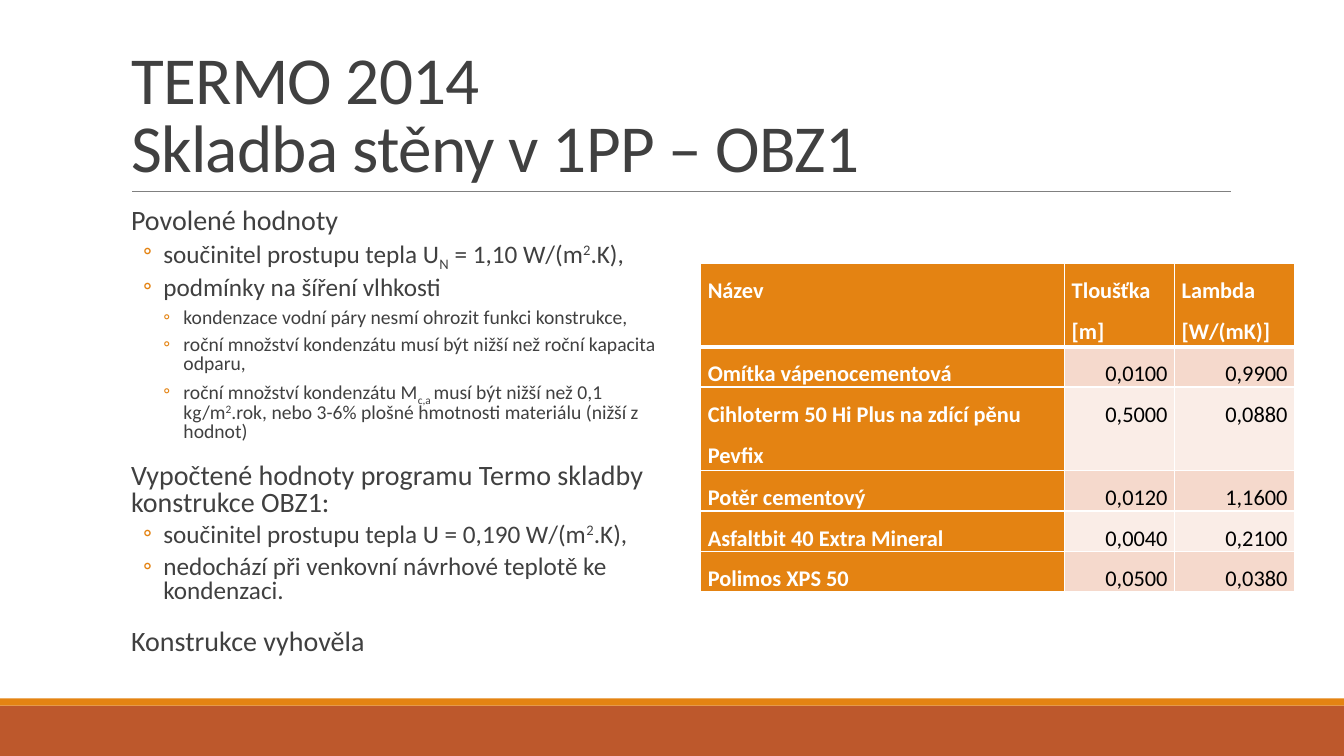
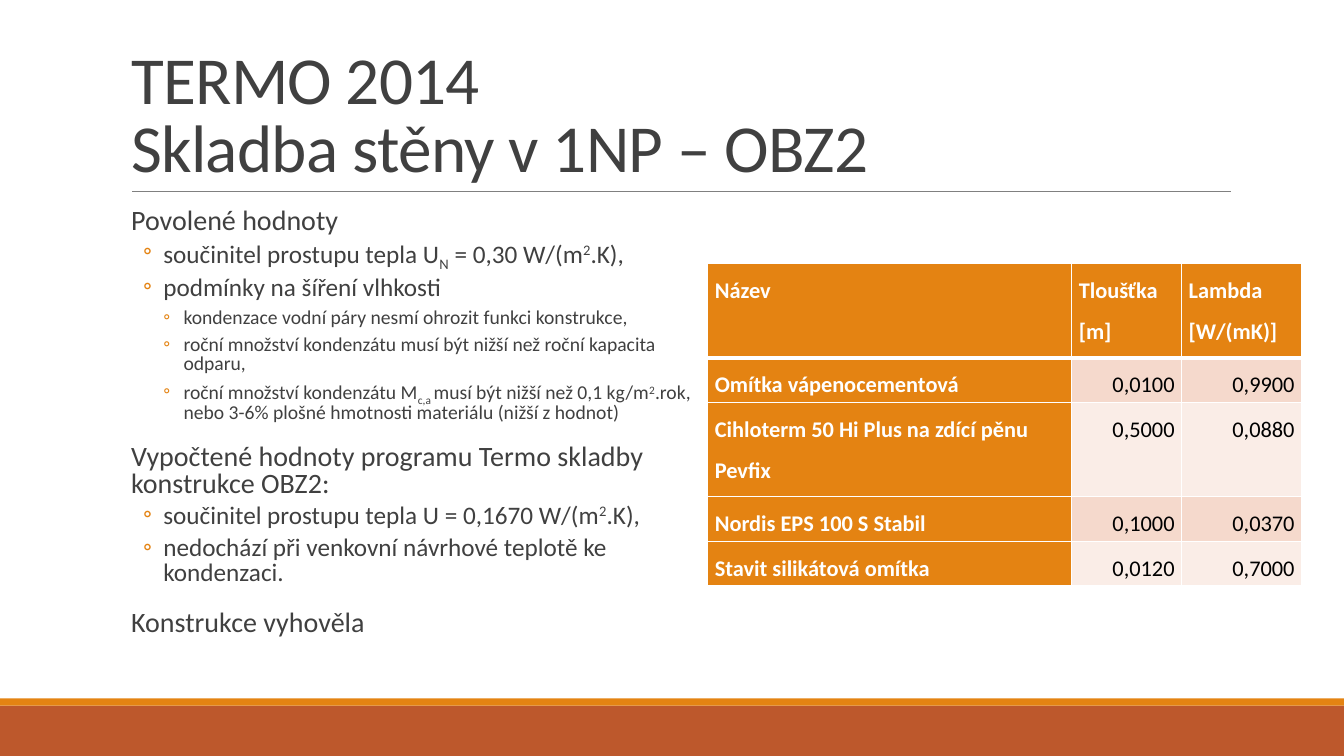
from dataclasses import dataclass

from lxml.etree import SubElement
from pptx import Presentation
from pptx.dml.color import RGBColor
from pptx.enum.shapes import MSO_CONNECTOR as Connector, MSO_SHAPE as Shape
from pptx.enum.text import MSO_ANCHOR as Anchor, PP_ALIGN as Align
from pptx.oxml import parse_xml
from pptx.oxml.ns import nsdecls, qn
from pptx.util import Inches, Pt

FONT = "Calibri"
WHITE, BLACK, TEXT, RULE = "FFFFFF", "000000", "404040", "808080"
ORANGE, RUST = "E48312", "BD582C"
BANDS = ("F5D9CC", "FAEDE7")
GRID_STEP = 0.1
COLUMNS, ROWS = 133.3, 75

LEVELS = {
    "heading": dict(size=20, margin=1, hanging=0, before=12, after=2, spacing=0.8),
    "item": dict(size=18, margin=4.2, hanging=2, before=2, after=4, spacing=0.8),
    "detail": dict(size=14, margin=6.2, hanging=2, before=2, after=4, spacing=0.8),
    "verdict": dict(size=20, margin=1, hanging=0, before=12, after=2, spacing=0.9),
}
BASELINES = {"_": "-25000", "^": "30000"}
HEADER = ("Název", "Tloušťka [m]", "Lambda¶[W/(mK)]")
TABLE_COLUMNS = (36.1, 10.9, 11.9)
PLASTER = ("Omítka vápenocementová", "0,0100", "0,9900")
BRICK = ("Cihloterm 50 Hi Plus na zdící pěnu Pevfix", "0,5000", "0,0880")
TALL_ROWS = (0, 2)


@dataclass
class Wall:
    storey: str
    code: str
    limit: str
    result: str
    text_width: float
    table_left: float
    row_heights: tuple
    layers: tuple


WALLS = (
    Wall("1PP", "OBZ1", "1,10", "0,190", 56.4, 69.5, (3.9, 8.3), (
        PLASTER, BRICK,
        ("Potěr cementový", "0,0120", "1,1600"),
        ("Asfaltbit 40 Extra Mineral", "0,0040", "0,2100"),
        ("Polimos XPS 50", "0,0500", "0,0380"),
    )),
    Wall("1NP", "OBZ2", "0,30", "0,1670", 56.8, 70.2, (4.4, 9.4), (
        PLASTER, BRICK,
        ("Nordis EPS 100 S Stabil", "0,1000", "0,0370"),
        ("Stavit silikátová omítka", "0,0120", "0,7000"),
    )),
)


def color(value):
    return RGBColor.from_string(value)


def grid(count):
    return Inches(count * GRID_STEP)


def place(box):
    return [grid(count) for count in box]


def apply(target, values):
    for name, value in values.items():
        setattr(target, name, value)


def style_font(font, size, tint, bold=False):
    apply(font, dict(name=FONT, size=Pt(size), bold=bold))
    font.color.rgb = color(tint)


def add_band(page, box, fill):
    band = page.shapes.add_shape(Shape.RECTANGLE, *place(box))
    band.shadow.inherit = False
    band.fill.solid()
    band.fill.fore_color.rgb = color(fill)
    band.line.fill.background()


def add_frame(page, box):
    left, top, width, height = box
    add_band(page, (left, top + height - 5, width, 5), RUST)
    add_band(page, (left, top + height - 5.7, width, 0.7), ORANGE)
    rule = page.shapes.add_connector(
        Connector.STRAIGHT, *place((left + 13.1, top + 19, left + 122.1, top + 19)))
    rule.line.color.rgb = color(RULE)
    rule.line.width = Pt(0.5)
    SubElement(rule.element.spPr, qn("a:effectLst"))


def add_title(page, box, lines):
    title = page.shapes.title
    apply(title, dict(zip(("left", "top", "width", "height"), place(box))))
    apply(title.text_frame, dict(vertical_anchor=Anchor.BOTTOM, word_wrap=True))
    para = title.text_frame.paragraphs[0]
    apply(para, dict(alignment=Align.LEFT, line_spacing=0.85))
    for index, line in enumerate(lines):
        if index:
            para.add_line_break()
        span = para.add_run()
        span.text = line
        style_font(span.font, 48, TEXT)
        span.font._element.set("spc", "-50")


def add_bullet(para, margin, hanging):
    properties = para._p.get_or_add_pPr()
    properties.set("marL", str(grid(margin)))
    properties.set("indent", str(-grid(hanging)))
    if hanging:
        tint = SubElement(properties, qn("a:buClr"))
        SubElement(tint, qn("a:srgbClr")).set("val", ORANGE)
        SubElement(properties, qn("a:buFont")).set("typeface", FONT)
        SubElement(properties, qn("a:buChar")).set("char", "◦")
    else:
        SubElement(properties, qn("a:buNone"))


def add_spans(para, text, size):
    for part in text.split("|"):
        span = para.add_run()
        span.text = part.lstrip("_^")
        style_font(span.font, size, TEXT)
        if part[0] in BASELINES:
            span.font._element.set("baseline", BASELINES[part[0]])


def add_findings(page, box, findings):
    frame = page.shapes.add_textbox(*place(box)).text_frame
    apply(frame, dict(word_wrap=True, margin_left=0, margin_right=0))
    for index, (level, text) in enumerate(findings):
        look = LEVELS[level]
        para = frame.add_paragraph() if index else frame.paragraphs[0]
        add_bullet(para, look["margin"], look["hanging"])
        apply(para, dict(
            line_spacing=look["spacing"],
            space_before=Pt(look["before"] if index else 0),
            space_after=Pt(look["after"])))
        add_spans(para, text, look["size"])


def add_borders(cell, row):
    widths = dict(L=1, R=1, T=3 if row == 1 else 1, B=3 if row == 0 else 1)
    for index, (side, width) in enumerate(widths.items()):
        border = parse_xml(
            f'<a:ln{side} {nsdecls("a")} w="{Pt(width)}"><a:solidFill>'
            f'<a:srgbClr val="{WHITE}"/></a:solidFill></a:ln{side}>')
        cell._tc.get_or_add_tcPr().insert(index, border)


def fill_cell(cell, row, column, text):
    named = row == 0 or column == 0
    cell.fill.solid()
    cell.fill.fore_color.rgb = color(ORANGE if named else BANDS[(row - 1) % 2])
    apply(cell, dict(margin_left=grid(0.7), margin_right=grid(0.7),
                     margin_top=0, margin_bottom=0))
    add_borders(cell, row)
    for index, line in enumerate(text.split("¶")):
        frame = cell.text_frame
        para = frame.add_paragraph() if index else frame.paragraphs[0]
        apply(para, dict(alignment=Align.LEFT if named else Align.RIGHT, line_spacing=1.5))
        span = para.add_run()
        span.text = line
        style_font(span.font, 16, WHITE if named else BLACK, named)


def add_layers(page, left, top, row_heights, layers):
    records = (HEADER, *layers)
    heights = [row_heights[row in TALL_ROWS] for row in range(len(records))]
    box = (left, top, sum(TABLE_COLUMNS), sum(heights))
    table = page.shapes.add_table(len(records), len(HEADER), *place(box)).table
    for column, width in zip(table.columns, TABLE_COLUMNS):
        column.width = grid(width)
    for row, (record, height) in enumerate(zip(records, heights)):
        table.rows[row].height = grid(height)
        for column, text in enumerate(record):
            fill_cell(table.cell(row, column), row, column, text)


def wall_findings(wall):
    return (
        ("heading", "Povolené hodnoty"),
        ("item", f"součinitel prostupu tepla U|_N| = {wall.limit} W/(m|^2|.K),"),
        ("item", "podmínky na šíření vlhkosti"),
        ("detail", "kondenzace vodní páry nesmí ohrozit funkci konstrukce,"),
        ("detail", "roční množství kondenzátu musí být nižší než roční kapacita odparu,"),
        ("detail", "roční množství kondenzátu M|_c,a |musí být nižší než 0,1 kg/m|^2|.rok, "
                   "nebo 3-6% plošné hmotnosti materiálu (nižší z hodnot)"),
        ("heading", f"Vypočtené hodnoty programu Termo skladby konstrukce {wall.code}:"),
        ("item", f"součinitel prostupu tepla U = {wall.result} W/(m|^2|.K),"),
        ("item", "nedochází při venkovní návrhové teplotě ke kondenzaci."),
        ("verdict", "Konstrukce vyhověla"),
    )


def add_wall_page(deck, wall):
    page = deck.slides.add_slide(deck.slide_layouts[5])
    add_frame(page, (0, 0, COLUMNS, ROWS))
    add_title(page, (12, 3.1, 110, 15.9),
              ("TERMO 2014", f"Skladba stěny v {wall.storey} – {wall.code}"))
    add_findings(page, (12, 20.2, wall.text_width, 47), wall_findings(wall))
    add_layers(page, wall.table_left, 26.1, wall.row_heights, wall.layers)


def main():
    deck = Presentation()
    apply(deck, dict(slide_width=grid(COLUMNS), slide_height=grid(ROWS)))
    for wall in WALLS:
        add_wall_page(deck, wall)
    deck.save("out.pptx")


if __name__ == "__main__":
    main()
